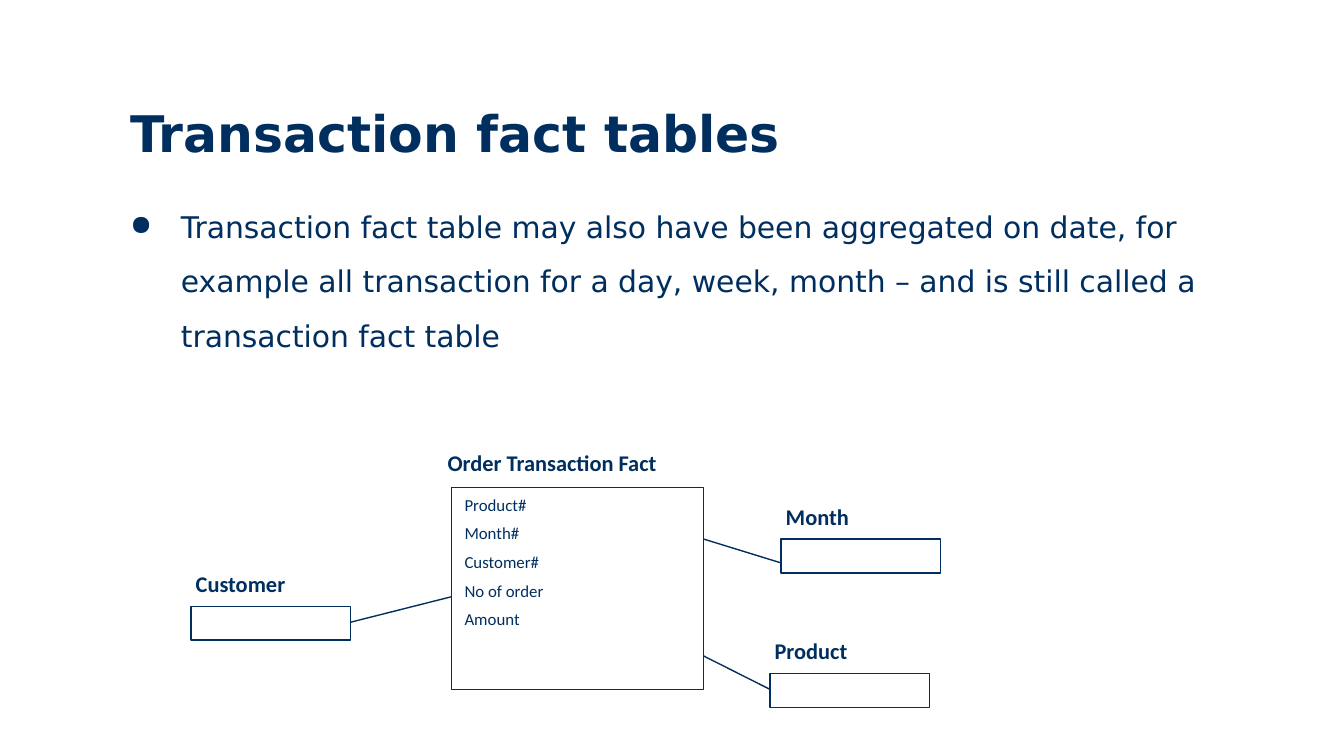
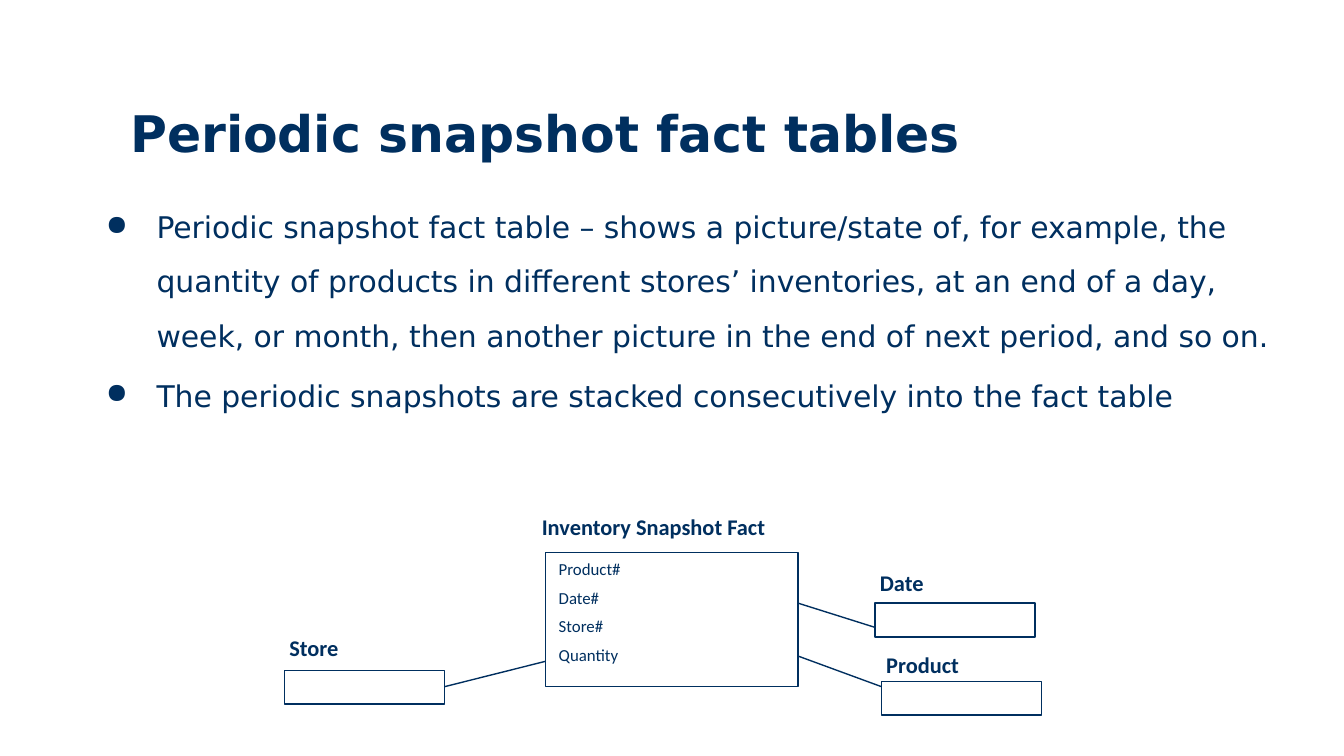
"""Build two slides on transaction and periodic snapshot fact tables."""
import lxml.etree
import pptx
import pptx.dml.color
import pptx.enum.shapes
import pptx.enum.text
import pptx.oxml.ns
import pptx.util

Cm = pptx.util.Cm
Pt = pptx.util.Pt

NAVY, WHITE = "002F5F", "FFFFFF"
HEADING_FONT, DIAGRAM_FONT = "DejaVu Sans", "Calibri"
PAGE_SIZE = (25.4, 14.29)
TITLE_AREA = (2.21, 1.75, 19.02, 1.65)
BODY_TOP = 3.48
BULLET_INDENT = 0.96
FACT_WIDTH = 4.77
FACT_LABEL_SHIFT = (-0.32, -0.86)
LABEL_SIZE = (5.56, 0.76)
COLUMNS_SIZE = (4.45, 2.95)
DIMENSION_SIZE = (3.02, 0.64)
DIMENSION_LABEL_SHIFT = -0.16

# Each dimension: name, left, top, label rise, link height at dimension, at fact
SLIDES = [
    {
        "title": "Transaction fact tables",
        "body": (2.21, 21.44, 3.78),
        "bullets": [
            "Transaction fact table may also have been aggregated on date, "
            "for example all transaction for a day, week, month – and is "
            "still called a transaction fact table",
        ],
        "fact": ("Order Transaction Fact", 8.53, 9.22, 3.81),
        "columns": ["Product#", "Month#", "Customer#", "No of order", "Amount"],
        "dimensions": [
            ("Month", 14.76, 10.19, 0.81, 10.64, 10.19),
            ("Product", 14.55, 12.73, 0.81, 13.03, 12.4),
            ("Customer", 3.61, 11.46, 0.81, 11.76, 11.28),
        ],
    },
    {
        "title": "Periodic snapshot fact tables",
        "body": (1.75, 22.81, 7.11),
        "bullets": [
            "Periodic snapshot fact table – shows a picture/state of, for "
            "example, the quantity of products in different stores’ "
            "inventories, at an end of a day, week, or month, then another "
            "picture in the end of next period, and so on.",
            "The periodic snapshots are stacked consecutively into the fact table",
        ],
        "fact": ("Inventory Snapshot Fact", 10.31, 10.44, 2.54),
        "columns": ["Product#", "Date#", "Store#", "Quantity"],
        "dimensions": [
            ("Date", 16.54, 11.4, 0.76, 11.86, 11.4),
            ("Product", 16.66, 12.88, 0.69, 12.98, 12.4),
            ("Store", 5.38, 12.67, 0.81, 12.98, 12.5),
        ],
    },
]


def color(value):
    return pptx.dml.color.RGBColor.from_string(value)


def add_bullet(para):
    properties = para._p.get_or_add_pPr()
    properties.set("marL", str(Cm(BULLET_INDENT)))
    properties.set("indent", str(-Cm(BULLET_INDENT)))
    for tag, name, value in (("a:buSzPct", "val", "93000"), ("a:buChar", "char", "●")):
        element = lxml.etree.SubElement(properties, pptx.oxml.ns.qn(tag))
        element.set(name, value)


def add_text(page, area, lines, font, size, bold=False, gap=0, leading=None,
             bullets=False, anchor=pptx.enum.text.MSO_ANCHOR.TOP):
    frame = page.shapes.add_textbox(*map(Cm, area)).text_frame
    frame.word_wrap = True
    frame.vertical_anchor = anchor
    for index, line in enumerate(lines):
        para = frame.add_paragraph() if index else frame.paragraphs[0]
        para.text = line
        if bullets:
            add_bullet(para)
        if index:
            para.space_before = Pt(gap)
        if leading:
            para.line_spacing = leading
        para.font.name = font
        para.font.size = Pt(size)
        para.font.bold = bold
        para.font.color.rgb = color(NAVY)


def add_label(page, left, top, name):
    add_text(page, (left, top, *LABEL_SIZE), [name], DIAGRAM_FONT, 12, bold=True)


def add_box(page, *area):
    box = page.shapes.add_shape(pptx.enum.shapes.MSO_SHAPE.RECTANGLE, *map(Cm, area))
    box.shadow.inherit = False
    box.fill.solid()
    box.fill.fore_color.rgb = color(WHITE)
    box.line.color.rgb = color(NAVY)
    box.line.width = Pt(0.75)


def add_link(page, *ends):
    link = page.shapes.add_connector(
        pptx.enum.shapes.MSO_CONNECTOR.STRAIGHT, *map(Cm, ends))
    link.line.color.rgb = color(NAVY)
    link.line.width = Pt(0.75)
    lxml.etree.SubElement(link._element.spPr, pptx.oxml.ns.qn("a:effectLst"))


def add_diagram(page, fact, columns, dimensions):
    name, fact_left, fact_top, height = fact
    shift_x, shift_y = FACT_LABEL_SHIFT
    add_box(page, fact_left, fact_top, FACT_WIDTH, height)
    add_label(page, fact_left + shift_x, fact_top + shift_y, name)
    add_text(page, (fact_left, fact_top, *COLUMNS_SIZE), columns,
             DIAGRAM_FONT, 9, gap=4.5)
    for name, left, top, rise, link_start, link_end in dimensions:
        add_label(page, left + DIMENSION_LABEL_SHIFT, top - rise, name)
        add_box(page, left, top, *DIMENSION_SIZE)
        if left < fact_left:
            edges = left + DIMENSION_SIZE[0], fact_left
        else:
            edges = left, fact_left + FACT_WIDTH
        add_link(page, edges[0], link_start, edges[1], link_end)


def main():
    deck = pptx.Presentation()
    deck.slide_width, deck.slide_height = map(Cm, PAGE_SIZE)
    for content in SLIDES:
        page = deck.slides.add_slide(deck.slide_layouts[6])
        add_text(page, TITLE_AREA, [content["title"]], HEADING_FONT, 27, bold=True,
                 leading=0.9, anchor=pptx.enum.text.MSO_ANCHOR.MIDDLE)
        left, width, height = content["body"]
        add_text(page, (left, BODY_TOP, width, height), content["bullets"],
                 HEADING_FONT, 16, gap=3.2, leading=Pt(29), bullets=True)
        add_diagram(page, content["fact"], content["columns"], content["dimensions"])
    deck.save("out.pptx")


if __name__ == "__main__":
    main()
